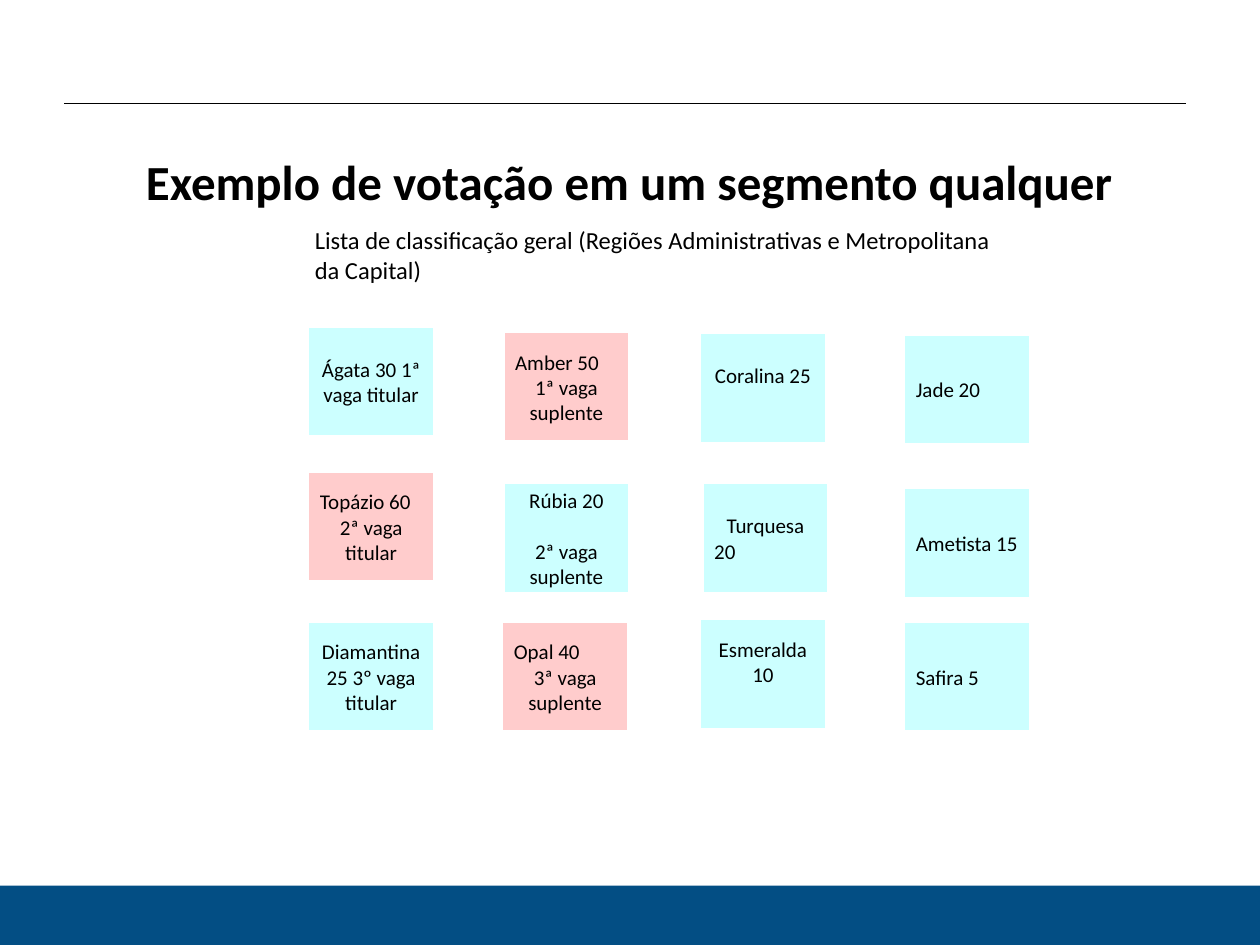
from lxml import etree
from pptx import Presentation
from pptx.dml.color import RGBColor
from pptx.enum.shapes import MSO_CONNECTOR, MSO_SHAPE
from pptx.enum.text import MSO_ANCHOR, PP_ALIGN
from pptx.oxml.ns import qn
from pptx.util import Inches, Pt

LEFT, CENTER = PP_ALIGN.LEFT, PP_ALIGN.CENTER
RECT, STRAIGHT = MSO_SHAPE.RECTANGLE, MSO_CONNECTOR.STRAIGHT
MIDDLE = MSO_ANCHOR.MIDDLE

WIDTH, HEIGHT = 10, 7.5
FONT = "Calibri"
BLACK, WHITE, NAVY = "000000", "FFFFFF", "034E84"
CYAN, PINK = "CCFFFF", "FFCCCC"
CARD_W, CARD_H = 1.01, 0.88
LINE = 0.2  # height of one line of card text

# left, top, fill, paragraphs (text, alignment), empty lines (between, below)
CARDS = [
    (2.44, 2.59, CYAN, [("Ágata 30 1ª vaga titular", CENTER)], (0, 0)),
    (2.44, 3.74, PINK, [("Topázio 60", LEFT), ("2ª vaga titular", CENTER)], (0, 0)),
    (2.44, 4.93, CYAN, [("Diamantina 25 3º vaga titular", CENTER)], (0, 0)),
    (3.99, 2.63, PINK, [("Amber 50", LEFT), ("1ª vaga suplente", CENTER)], (0, 0)),
    (3.99, 3.83, CYAN, [("Rúbia 20", CENTER), ("2ª vaga suplente", CENTER)], (1, 0)),
    (3.98, 4.93, PINK, [("Opal 40", LEFT), ("3ª vaga suplente", CENTER)], (0, 0)),
    (5.55, 2.64, CYAN, [("Coralina 25", CENTER)], (0, 1)),
    (5.57, 3.83, CYAN, [("Turquesa", CENTER), ("20", LEFT)], (0, 0)),
    (5.55, 4.91, CYAN, [("Esmeralda 10", CENTER)], (0, 1)),
    (7.17, 2.65, CYAN, [("Jade 20", LEFT)], (0, 0)),
    (7.17, 3.87, CYAN, [("Ametista 15", LEFT)], (0, 0)),
    (7.17, 4.93, CYAN, [("Safira 5", LEFT)], (0, 0)),
]


def rgb(value):
    return RGBColor.from_string(value)


def set_text(tf, paragraphs, size, bold=False, gap=0):
    tf.word_wrap = True
    for i, (text, align) in enumerate(paragraphs):
        p = tf.add_paragraph() if i else tf.paragraphs[0]
        p.text = text
        p.alignment = align
        if i and gap:
            p.space_before = Inches(gap)
        p.font.name, p.font.size, p.font.bold = FONT, Pt(size), bold
        p.font.color.rgb = rgb(BLACK)


def add_rect(s, box, fill):
    sp = s.shapes.add_shape(RECT, *map(Inches, box))
    sp.shadow.inherit = False
    sp.fill.solid()
    sp.fill.fore_color.rgb = rgb(fill)
    sp.line.fill.background()
    return sp


def add_frame(s):
    """Footer band and the rule at the top."""
    band = 0.47
    add_rect(s, (0, HEIGHT - band, WIDTH, band), NAVY)
    ends = (0.51, 0.82, 9.41, 0.82)
    rule = s.shapes.add_connector(STRAIGHT, *map(Inches, ends))
    rule.line.color.rgb = rgb(BLACK)
    rule.line.width = Pt(0.75)
    etree.SubElement(rule._element.spPr, qn("a:effectLst"))


def add_heading(s, box, text, size, bold=False):
    tb = s.shapes.add_textbox(*map(Inches, box))
    set_text(tb.text_frame, [(text, LEFT)], size, bold)


def add_card(s, left, top, fill, paragraphs, empty_lines):
    between, below = empty_lines
    sp = add_rect(s, (left, top, CARD_W, CARD_H), fill)
    sp.line.color.rgb = rgb(WHITE)
    sp.line.width = Pt(2)
    tf = sp.text_frame
    tf.vertical_anchor = MIDDLE
    tf.margin_bottom = Inches(0.05 + below * LINE)
    set_text(tf, paragraphs, 12, gap=between * LINE)


def main():
    prs = Presentation()
    prs.slide_width, prs.slide_height = Inches(WIDTH), Inches(HEIGHT)
    s = prs.slides.add_slide(prs.slide_layouts[6])
    add_frame(s)
    add_heading(s, (1.06, 1.15, 8.43, 0.88),
                "Exemplo de votação em um segmento qualquer", 28, bold=True)
    add_heading(s, (2.4, 1.74, 5.75, 0.57),
                "Lista de classificação geral (Regiões Administrativas "
                "e Metropolitana da Capital)", 14)
    for card in CARDS:
        add_card(s, *card)
    prs.save("out.pptx")


if __name__ == "__main__":
    main()
